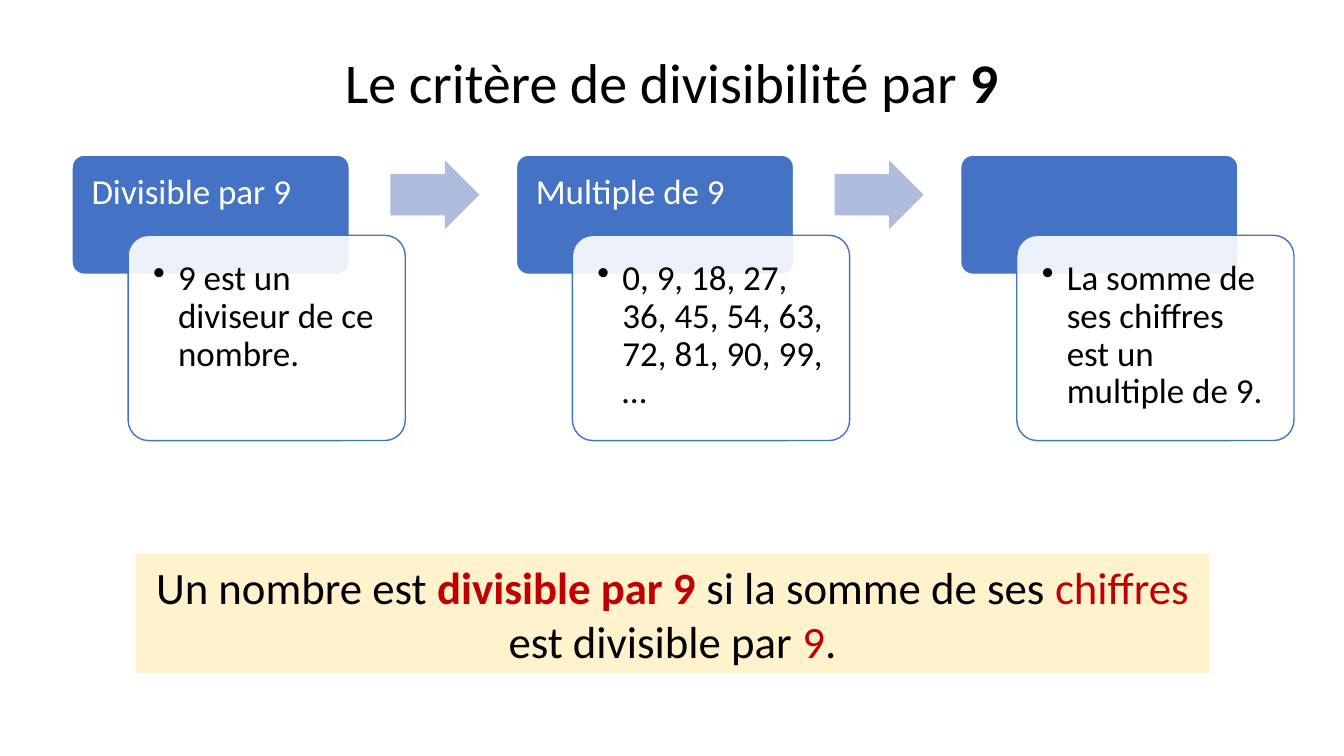
from pptx import Presentation
from pptx.dml.color import RGBColor
from pptx.enum.shapes import MSO_SHAPE
from pptx.enum.text import MSO_ANCHOR, PP_ALIGN
from pptx.oxml.ns import qn
from pptx.util import Emu, Pt
from lxml import etree

# Content
TITLE = [("Le critère de divisibilité par ", {}), ("9", {"bold": True})]
STEPS = [
    ("Divisible par 9", "9 est un diviseur de ce nombre."),
    ("Multiple de 9", "0, 9, 18, 27, 36, 45, 54, 63, 72, 81, 90, 99, …"),
    ("", "La somme de ses chiffres est un multiple de 9."),
]
RED = "C00000"
RULE = [
    ("Un nombre est ", {}),
    ("divisible par 9", {"bold": True, "color": RED}),
    (" si la somme de ses ", {}),
    ("chiffres ", {"color": RED}),
    ("est divisible par ", {}),
    ("9", {"color": RED}),
    (".", {}),
]
BLUE, ARROW_BLUE, CREAM = "4472C4", "B0BCDE", "FFF2CC"
BLACK, WHITE = "000000", "FFFFFF"

# Layout in px
SCALE = 9080
SLIDE_SIZE = (1343, 755)
TITLE_BOX = (201, 50, 940, 89)
RULE_BOX = (136, 553, 1072, 119)
STEP_LEFT, STEP_TOP, STEP_PITCH = 72, 155, 444
HEADER_SIZE, BODY_SIZE, ARROW_SIZE = (277, 119), (277, 205), (89, 69)
BODY_SHIFT, ARROW_SHIFT = (56, 80), (318, 5)


def px(value):
    return Emu(value * SCALE)


def rgb(color):
    return RGBColor.from_string(color)


def set_values(target, values):
    for name, value in values.items():
        setattr(target, name, value)


def add_shape(kind, box, fill, line=None, adjustments=()):
    shape = slide.shapes.add_shape(kind, *map(px, box))
    shape.shadow.inherit = False
    shape.fill.solid()
    shape.fill.fore_color.rgb = rgb(fill)
    if line:
        shape.line.color.rgb = rgb(line)
        shape.line.width = Pt(1)
    else:
        shape.line.fill.background()
    for index, value in enumerate(adjustments):
        shape.adjustments[index] = value
    return shape


def write(shape, runs, size, color=BLACK, anchor=MSO_ANCHOR.TOP, margin=None, **paragraph_format):
    frame = shape.text_frame
    set_values(frame, {"word_wrap": True, "vertical_anchor": anchor})
    if margin is not None:
        sides = ("left", "top", "right", "bottom")
        set_values(frame, {f"margin_{side}": px(margin) for side in sides})
    paragraph = frame.paragraphs[0]
    set_values(paragraph, paragraph_format)
    for text, style in runs:
        run = paragraph.add_run()
        run.text = text
        set_values(run.font, {"name": "Calibri", "size": Pt(size), "bold": style.get("bold", False)})
        run.font.color.rgb = rgb(style.get("color", color))
    return paragraph


def add_bullet(paragraph, indent):
    properties = paragraph._p.get_or_add_pPr()
    properties.set("marL", str(px(indent)))
    properties.set("indent", str(-px(indent)))
    etree.SubElement(properties, qn("a:buChar")).set("char", "•")


def set_opacity(shape, percent):
    color = shape.fill._xPr.find(qn("a:solidFill"))[0]
    etree.SubElement(color, qn("a:alpha")).set("val", str(percent * 1000))


presentation = Presentation()
set_values(presentation, dict(zip(("slide_width", "slide_height"), map(px, SLIDE_SIZE))))
slide = presentation.slides.add_slide(presentation.slide_layouts[6])

# Title
title = slide.shapes.add_textbox(*map(px, TITLE_BOX))
write(title, TITLE, 40, alignment=PP_ALIGN.CENTER, line_spacing=0.9)

# Rule
rule = add_shape(MSO_SHAPE.RECTANGLE, RULE_BOX, CREAM)
write(rule, RULE, 32, anchor=MSO_ANCHOR.MIDDLE, alignment=PP_ALIGN.CENTER)

# Steps: header, overlapping card, arrow to the next step
for index, (heading, detail) in enumerate(STEPS):
    left = STEP_LEFT + index * STEP_PITCH
    header = add_shape(MSO_SHAPE.ROUNDED_RECTANGLE, (left, STEP_TOP, *HEADER_SIZE), BLUE, WHITE, (0.1,))
    if heading:
        write(header, [(heading, {})], 25, WHITE, margin=16, alignment=PP_ALIGN.LEFT, line_spacing=0.9)

    body_box = (left + BODY_SHIFT[0], STEP_TOP + BODY_SHIFT[1], *BODY_SIZE)
    body = add_shape(MSO_SHAPE.ROUNDED_RECTANGLE, body_box, WHITE, BLUE, (0.1,))
    set_opacity(body, 90)
    paragraph = write(body, [(detail, {})], 25, margin=19, alignment=PP_ALIGN.LEFT, line_spacing=0.9)
    add_bullet(paragraph, 25)

    if index < len(STEPS) - 1:
        arrow_box = (left + ARROW_SHIFT[0], STEP_TOP + ARROW_SHIFT[1], *ARROW_SIZE)
        add_shape(MSO_SHAPE.RIGHT_ARROW, arrow_box, ARROW_BLUE, adjustments=(0.6, 0.5))

presentation.save("out.pptx")
